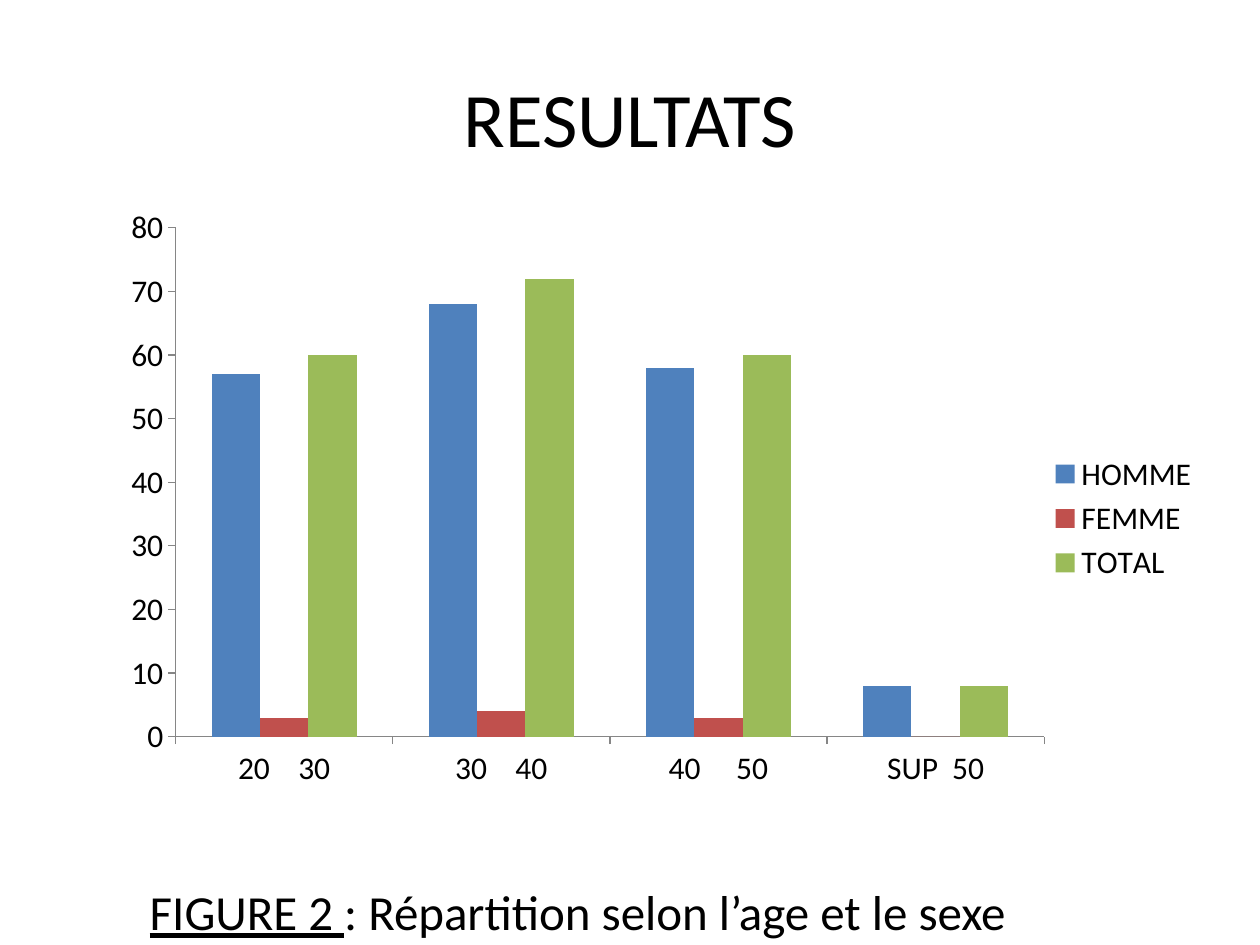
from lxml.etree import SubElement
from pptx import Presentation
from pptx.chart.data import CategoryChartData
from pptx.dml.color import RGBColor
from pptx.enum.chart import XL_CHART_TYPE, XL_LEGEND_POSITION, XL_TICK_MARK
from pptx.enum.text import MSO_ANCHOR, PP_ALIGN
from pptx.oxml.ns import qn
from pptx.util import Inches, Pt

BLACK = RGBColor(0x00, 0x00, 0x00)
GREY = RGBColor(0x86, 0x86, 0x86)
BLUE = RGBColor(0x4F, 0x81, 0xBD)
RED = RGBColor(0xC0, 0x50, 0x4D)
GREEN = RGBColor(0x9B, 0xBB, 0x59)


def style_font(font, size):
    font.name = "Calibri"
    font.size = Pt(size)
    font.color.rgb = BLACK


presentation = Presentation()
presentation.slide_width = Inches(10)
presentation.slide_height = Inches(7.5)
slide = presentation.slides.add_slide(presentation.slide_layouts[5])

# Title
title = slide.shapes.title
title.left, title.top = Inches(0.5), Inches(0.3)
title.width, title.height = Inches(9), Inches(1.25)
title.text_frame.vertical_anchor = MSO_ANCHOR.MIDDLE
paragraph = title.text_frame.paragraphs[0]
paragraph.alignment = PP_ALIGN.CENTER
run = paragraph.add_run()
run.text = "RESULTATS"
style_font(run.font, 44)

# Chart of age groups by sex
age_groups = ["20    30", "30    40", "40     50", "SUP  50"]
series_rows = [
    ("HOMME", (57, 68, 58, 8), BLUE),
    ("FEMME", (3, 4, 3, 0), RED),
    ("TOTAL", (60, 72, 60, 8), GREEN),
]
chart_data = CategoryChartData()
chart_data.categories = age_groups
for name, values, color in series_rows:
    chart_data.add_series(name, values)
chart = slide.shapes.add_chart(
    XL_CHART_TYPE.COLUMN_CLUSTERED,
    Inches(0.62), Inches(1.64), Inches(9), Inches(4.95), chart_data,
).chart
chart.has_title = False
style_font(chart.font, 18)

plot = chart.plots[0]
plot.vary_by_categories = False
plot.gap_width = 150
plot.overlap = 0
for series, (name, values, color) in zip(plot.series, series_rows):
    series.format.fill.solid()
    series.format.fill.fore_color.rgb = color

for axis in (chart.category_axis, chart.value_axis):
    axis.has_major_gridlines = False
    axis.major_tick_mark = XL_TICK_MARK.OUTSIDE
    axis.format.line.color.rgb = GREY
    axis.format.line.width = Pt(0.75)
chart.value_axis.minimum_scale = 0
chart.value_axis.maximum_scale = 80
chart.value_axis.major_unit = 10

chart.has_legend = True
chart.legend.position = XL_LEGEND_POSITION.RIGHT
chart.legend.include_in_layout = False

# Inner plot area as shares of the chart
plot_area = chart.element.find(".//" + qn("c:plotArea"))
layout = plot_area.find(qn("c:layout"))
if layout is None:
    layout = SubElement(plot_area, qn("c:layout"))
    plot_area.insert(0, layout)
manual_layout = SubElement(layout, qn("c:manualLayout"))
for tag, value in [
    ("layoutTarget", "inner"), ("xMode", "edge"), ("yMode", "edge"),
    ("x", "0.086"), ("y", "0.034"), ("w", "0.766"), ("h", "0.816"),
]:
    SubElement(manual_layout, qn(f"c:{tag}")).set("val", value)

# Caption
caption = slide.shapes.add_textbox(
    Inches(1.09), Inches(6.95), Inches(8.36), Inches(0.57))
caption.text_frame.word_wrap = True
paragraph = caption.text_frame.paragraphs[0]
for text, underlined in [
    ("FIGURE 2 ", True),
    (": Répartition selon l’age et le sexe", False),
]:
    run = paragraph.add_run()
    run.text = text
    style_font(run.font, 28)
    run.font.underline = underlined

presentation.save("out.pptx")
